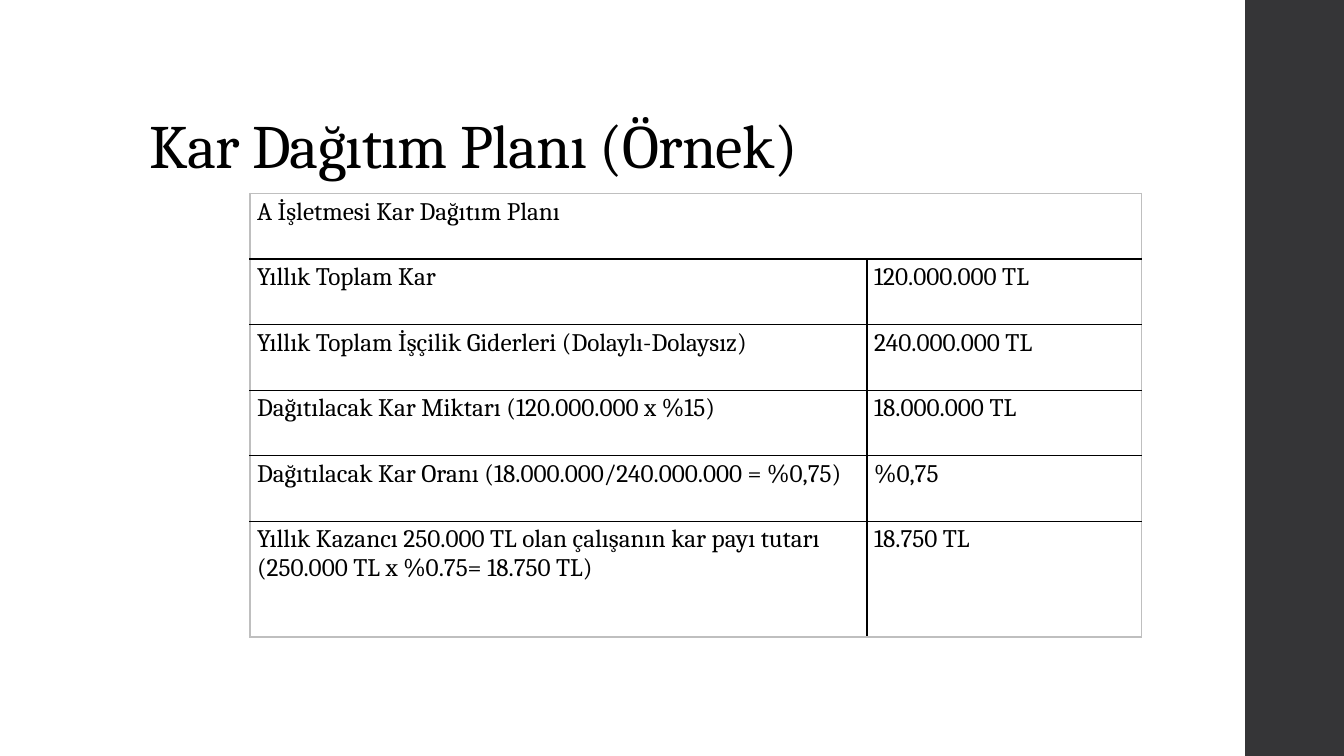
"""Builds the profit distribution plan slide."""
from dataclasses import dataclass

import pptx
import pptx.dml.color
import pptx.enum.shapes
import pptx.enum.text
import pptx.oxml
import pptx.oxml.ns
import pptx.util
from pptx.util import Inches


@dataclass(frozen=True)
class Theme:
    font: str = "Cambria"
    ink: str = "000000"
    frame: str = "BFBFBF"
    sidebar: str = "353537"
    title_size: int = 44
    cell_size: int = 18


class SlideBuilder:
    def __init__(self, slide, theme):
        self.slide = slide
        self.theme = theme

    def add_run(self, paragraph, text, size):
        run = paragraph.add_run()
        run.text = text
        run.font.name = self.theme.font
        run.font.size = pptx.util.Pt(size)
        run.font.bold = False
        run.font.color.rgb = pptx.dml.color.RGBColor.from_string(self.theme.ink)
        return run

    def add_bar(self, left, top, width, height):
        bar = self.slide.shapes.add_shape(
            pptx.enum.shapes.MSO_SHAPE.RECTANGLE,
            Inches(left), Inches(top), Inches(width), Inches(height))
        bar.shadow.inherit = False
        bar.fill.solid()
        bar.fill.fore_color.rgb = pptx.dml.color.RGBColor.from_string(self.theme.sidebar)
        bar.line.fill.background()

    def set_title(self, text, left, top, width, height):
        title = self.slide.shapes.title
        title.left, title.top = Inches(left), Inches(top)
        title.width, title.height = Inches(width), Inches(height)
        frame = title.text_frame
        frame.word_wrap = True
        frame.auto_size = pptx.enum.text.MSO_AUTO_SIZE.NONE
        frame.vertical_anchor = pptx.enum.text.MSO_ANCHOR.BOTTOM
        heading = frame.paragraphs[0]
        heading.alignment = pptx.enum.text.PP_ALIGN.LEFT
        heading.line_spacing = 0.9
        run = self.add_run(heading, text, self.theme.title_size)
        run.font._element.set("spc", "-50")

    def set_border(self, cell, side, color):
        cell._tc.get_or_add_tcPr().append(pptx.oxml.parse_xml(
            f'<a:ln{side} {pptx.oxml.ns.nsdecls("a")} w="{pptx.util.Pt(1)}">'
            f'<a:solidFill><a:srgbClr val="{color}"/></a:solidFill></a:ln{side}>'))

    def format_cell(self, cell, outer_sides):
        cell.margin_left = cell.margin_right = Inches(0.07)
        cell.margin_top = cell.margin_bottom = Inches(0.04)
        for side in "LRTB":
            self.set_border(cell, side, self.theme.frame if side in outer_sides else self.theme.ink)
        cell.fill.background()

    def fill_cell(self, cell, text):
        paragraph = cell.text_frame.paragraphs[0]
        paragraph.space_before = pptx.util.Pt(4.6)
        paragraph.space_after = pptx.util.Pt(6)
        self.add_run(paragraph, text, self.theme.cell_size)

    def add_table(self, heading, entries, left, top, widths, heights):
        table = self.slide.shapes.add_table(
            len(heights), len(widths), Inches(left), Inches(top),
            Inches(sum(widths)), Inches(sum(heights))).table
        table.first_row = table.horz_banding = False
        for column, width in zip(table.columns, widths):
            column.width = Inches(width)
        for row, height in zip(table.rows, heights):
            row.height = Inches(height)
        table.cell(0, 0).merge(table.cell(0, len(widths) - 1))
        for r in range(len(heights)):
            for c in range(len(widths)):
                outer_sides = (("T" if r == 0 else "") + ("B" if r == len(heights) - 1 else "")
                               + ("L" if c == 0 else "")
                               + ("R" if r == 0 or c == len(widths) - 1 else ""))
                self.format_cell(table.cell(r, c), outer_sides)
        self.fill_cell(table.cell(0, 0), heading)
        for r, entry in enumerate(entries, 1):
            for c, text in enumerate(entry):
                self.fill_cell(table.cell(r, c), text)


PLAN = [
    ("Yıllık Toplam Kar", "120.000.000 TL"),
    ("Yıllık Toplam İşçilik Giderleri (Dolaylı-Dolaysız)", "240.000.000 TL"),
    ("Dağıtılacak Kar Miktarı (120.000.000 x %15)", "18.000.000 TL"),
    ("Dağıtılacak Kar Oranı (18.000.000/240.000.000 = %0,75)", "%0,75"),
    ("Yıllık Kazancı 250.000 TL olan çalışanın kar payı tutarı (250.000 TL x %0.75= 18.750 TL)",
     "18.750 TL"),
]

presentation = pptx.Presentation()
presentation.slide_width = Inches(13.33)
presentation.slide_height = Inches(7.5)
title_only = presentation.slide_layouts[5]
builder = SlideBuilder(presentation.slides.add_slide(title_only), Theme())
builder.add_bar(12.35, 0, 0.98, 7.5)
builder.set_title("Kar Dağıtım Planı (Örnek)", 1.38, 0.4, 10.6, 1.45)
builder.add_table("A İşletmesi Kar Dağıtım Planı", PLAN, 2.48, 1.92,
                  [6.12, 2.72], [0.65] * len(PLAN) + [1.15])
presentation.save("out.pptx")
